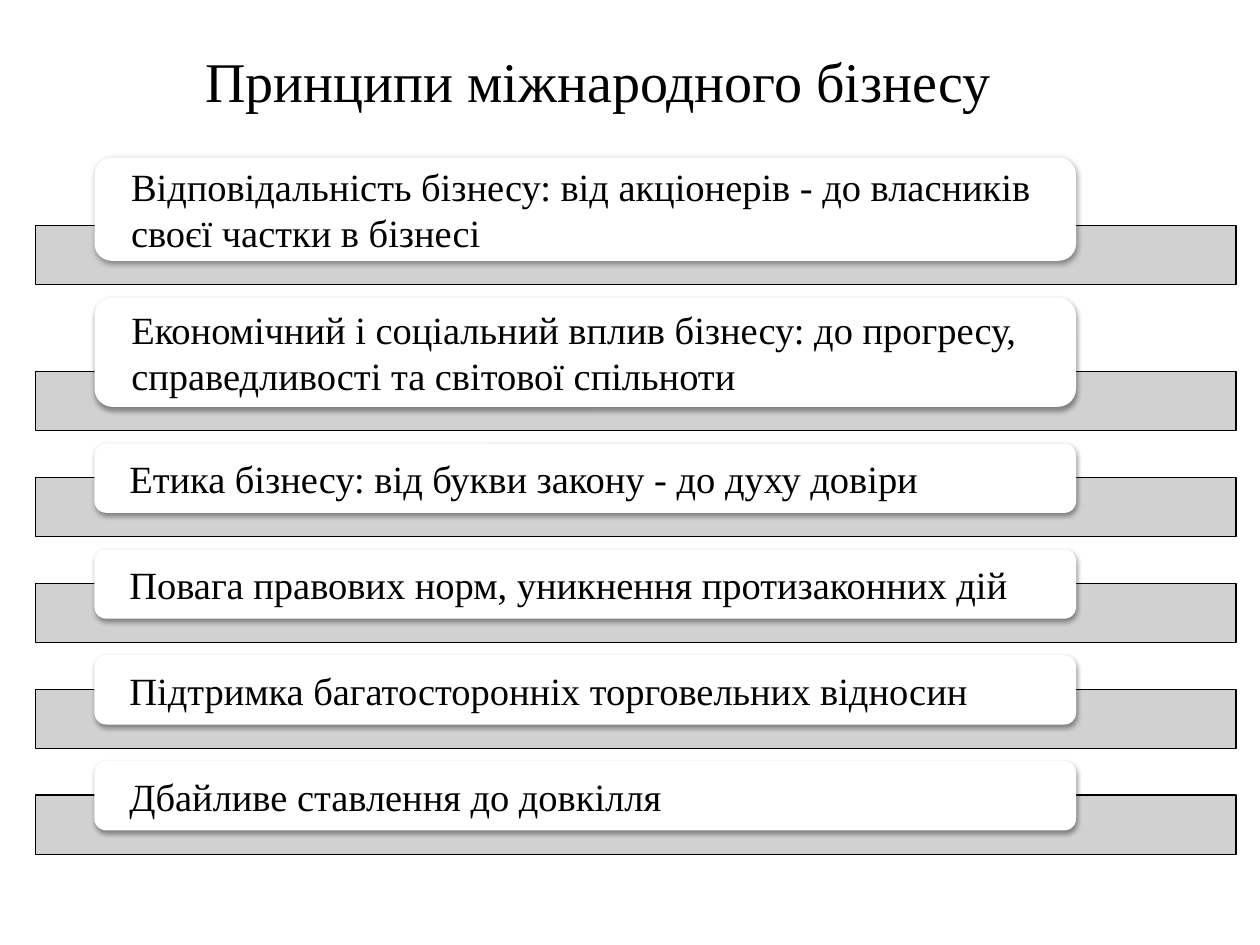
from dataclasses import dataclass

import lxml.etree
import pptx
import pptx.dml.color
import pptx.enum.shapes
import pptx.enum.text
import pptx.oxml.ns
import pptx.util

Inches = pptx.util.Inches
SHAPES = pptx.enum.shapes.MSO_SHAPE
ALIGN = pptx.enum.text.PP_ALIGN
ANCHOR = pptx.enum.text.MSO_ANCHOR
qn = pptx.oxml.ns.qn


@dataclass(frozen=True)
class Theme:
    font: str = "Times New Roman"
    ink: str = "000000"
    card: str = "FFFFFF"
    bar: str = "CCCCCC"
    title_size: int = 32
    card_size: int = 22


def rgb(value):
    return pptx.dml.color.RGBColor.from_string(value)


def write_text(frame, text, *, font, size, color, anchor, inset_x, inset_y):
    frame.word_wrap = True
    frame.vertical_anchor = anchor
    frame.margin_left = frame.margin_right = Inches(inset_x)
    frame.margin_top = frame.margin_bottom = Inches(inset_y)
    paragraph = frame.paragraphs[0]
    paragraph.alignment = ALIGN.LEFT
    run = paragraph.add_run()
    run.text = text
    run.font.name = font
    run.font.size = pptx.util.Pt(size)
    run.font.color.rgb = rgb(color)


class PrinciplesSlide:
    def __init__(self, presentation, theme):
        self.theme = theme
        self.slide = presentation.slides.add_slide(presentation.slide_layouts[5])

    def title(self, text, left, top, width, height):
        heading = self.slide.shapes.title
        heading.left, heading.top = Inches(left), Inches(top)
        heading.width, heading.height = Inches(width), Inches(height)
        write_text(heading.text_frame, text, font=self.theme.font,
                   size=self.theme.title_size, color=self.theme.ink,
                   anchor=ANCHOR.TOP, inset_x=0.1, inset_y=0.05)
        heading.text_frame.auto_size = pptx.enum.text.MSO_AUTO_SIZE.SHAPE_TO_FIT_TEXT

    def block(self, preset, left, top, width, height, color):
        block = self.slide.shapes.add_shape(
            preset, Inches(left), Inches(top), Inches(width), Inches(height))
        block.shadow.inherit = False
        block.fill.solid()
        block.fill.fore_color.rgb = rgb(color)
        return block

    def bar(self, left, top, width, height):
        bar = self.block(SHAPES.RECTANGLE, left, top, width, height, self.theme.bar)
        bar.line.color.rgb = rgb(self.theme.ink)
        bar.line.width = pptx.util.Pt(0.75)
        tint = next(bar._element.spPr.iter(qn("a:srgbClr")))
        lxml.etree.SubElement(tint, qn("a:alpha"), val="90000")

    def card(self, text, left, top, width, height):
        card = self.block(SHAPES.ROUNDED_RECTANGLE, left, top, width, height,
                          self.theme.card)
        card.line.fill.background()
        effects = card._element.spPr.find(qn("a:effectLst"))
        shadow = lxml.etree.SubElement(
            effects, qn("a:outerShdw"), blurRad=str(pptx.util.Pt(3.1)),
            dist=str(pptx.util.Pt(1.6)), dir="5400000", rotWithShape="0")
        shade = lxml.etree.SubElement(shadow, qn("a:srgbClr"), val=self.theme.ink)
        lxml.etree.SubElement(shade, qn("a:alpha"), val="38000")
        write_text(card.text_frame, text, font=self.theme.font,
                   size=self.theme.card_size, color=self.theme.ink,
                   anchor=ANCHOR.MIDDLE, inset_x=0.25, inset_y=0)


def main():
    presentation = pptx.Presentation()
    presentation.slide_width, presentation.slide_height = Inches(10), Inches(7.5)
    page = PrinciplesSlide(presentation, Theme())

    principles = [
        ("Відповідальність бізнесу: від акціонерів - до власників своєї частки в бізнесі", 0.82),
        ("Економічний і соціальний вплив бізнесу: до прогресу, справедливості та світової спільноти", 0.87),
        ("Етика бізнесу: від букви закону - до духу довіри", 0.55),
        ("Повага правових норм, уникнення протизаконних дій", 0.55),
        ("Підтримка багатосторонніх торговельних відносин", 0.55),
        ("Дбайливе ставлення до довкілля", 0.55),
    ]
    bar_height, overlap, gap = 0.47, 0.28, 0.1
    card_top = 1.25
    for principle, card_height in principles:
        bar_top = card_top + card_height - overlap
        page.bar(0.28, bar_top, 9.53, bar_height)
        page.card(principle, 0.75, card_top, 7.79, card_height)
        card_top = bar_top + bar_height + gap

    page.title("Принципи міжнародного бізнесу", 1.53, 0.32, 6.75, 0.64)
    presentation.save("out.pptx")


if __name__ == "__main__":
    main()
